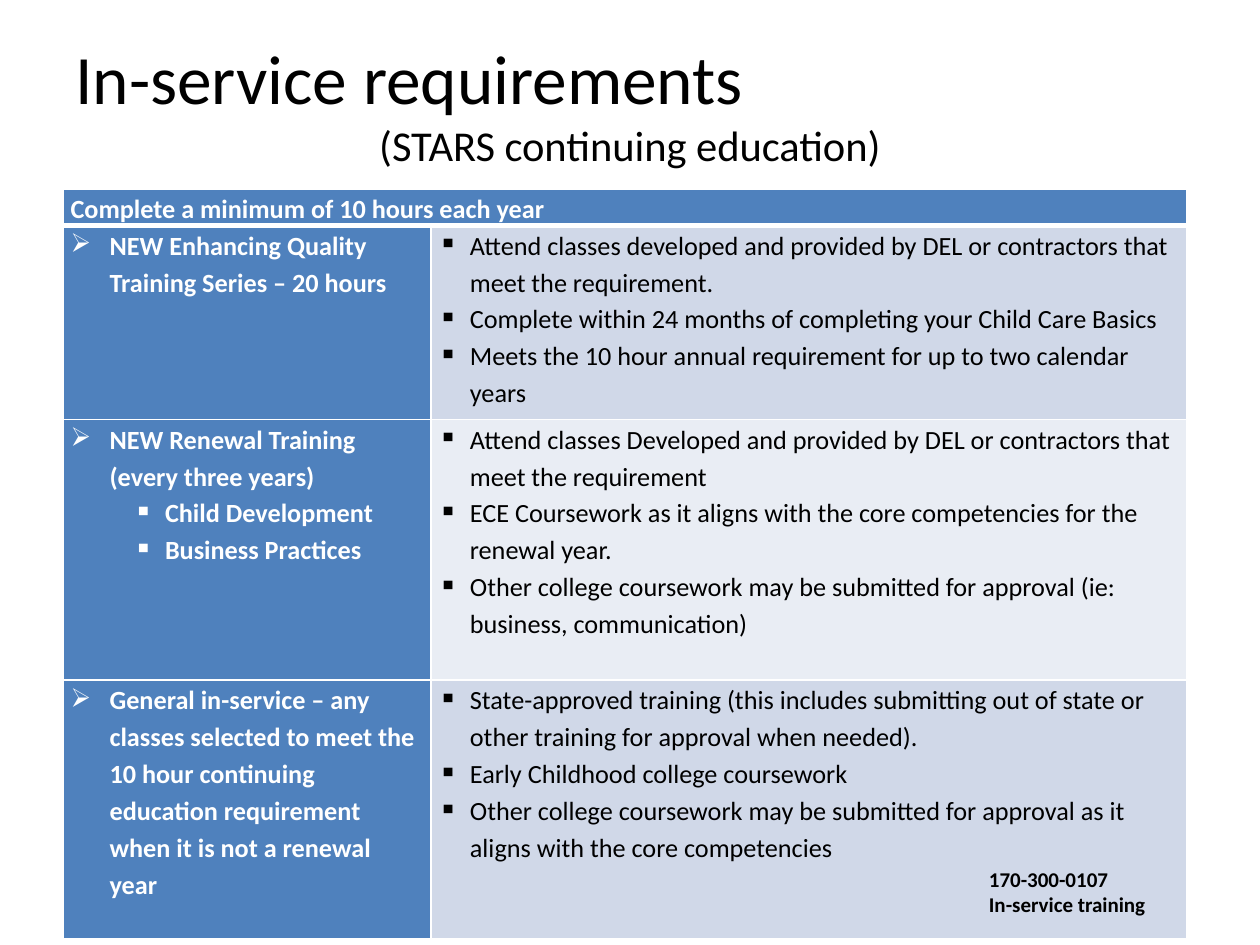
from lxml import etree
from pptx import Presentation
from pptx.dml.color import RGBColor
from pptx.enum.text import MSO_ANCHOR, PP_ALIGN
from pptx.oxml.ns import qn
from pptx.util import Inches, Pt

LEFT, CENTER = PP_ALIGN.LEFT, PP_ALIGN.CENTER
MIDDLE, TOP = MSO_ANCHOR.MIDDLE, MSO_ANCHOR.TOP
BLACK, WHITE, BLUE = "000000", "FFFFFF", "4F81BD"
BANDS = ["D0D8E8", "E9EDF4"]
COLUMNS = [2.92, 6]
ROWS = [0.28, 1.54, 2.07, 2.05]
ARROW, SQUARE, SUBSQUARE = ("➢", 0.31, 0.31), ("▪", 0.25, 0.25), ("▪", 0.75, 0.25)

HEADING = "Complete a minimum of 10 hours each year"
TRAININGS = [
    ("NEW Enhancing Quality Training Series – 20 hours", [], [
        "Attend classes developed and provided by DEL or contractors that meet the requirement.",
        "Complete within 24 months of completing your Child Care Basics",
        "Meets the 10 hour annual requirement for up to two calendar years"]),
    ("NEW Renewal Training (every three years)",
     ["Child Development", "Business Practices"], [
        "Attend classes Developed and provided by DEL or contractors that meet the requirement",
        "ECE Coursework as it aligns with the core competencies for the renewal year.",
        "Other college coursework may be submitted for approval (ie: business, communication)"]),
    ("General in-service – any classes selected to meet the 10 hour continuing "
     "education requirement when it is not a renewal year", [], [
        "State-approved training (this includes submitting out of state or other training "
        "for approval when needed).",
        "Early Childhood college coursework",
        "Other college coursework may be submitted for approval as it aligns with the "
        "core competencies"]),
]


def rgb(value):
    """Turn a hex string into a colour."""
    return RGBColor.from_string(value)


def set_all(target, values):
    """Set each attribute in a dict on the target."""
    for name, value in values.items():
        setattr(target, name, value)


def write(paragraph, text, size, color=BLACK, bold=False, align=LEFT):
    """Write one styled run into a paragraph."""
    paragraph.alignment = align
    run = paragraph.add_run()
    run.text = text
    set_all(run.font, {"name": "Calibri", "size": Pt(size), "bold": bold})
    run.font.color.rgb = rgb(color)


def add_bullet(paragraph, bullet):
    """Give a paragraph a bullet and its hanging indent."""
    mark, margin, hang = bullet
    properties = paragraph._p.get_or_add_pPr()
    properties.set("marL", str(Inches(margin)))
    properties.set("indent", str(-Inches(hang)))
    etree.SubElement(properties, qn("a:buChar")).set("char", mark)


def add_borders(cell, top, bottom):
    """Draw white cell borders of the given top and bottom widths."""
    properties = cell._tc.get_or_add_tcPr()
    for side, width in {"L": 1, "R": 1, "T": top, "B": bottom}.items():
        line = etree.SubElement(properties, qn(f"a:ln{side}"), w=str(Pt(width)))
        solid = etree.SubElement(line, qn("a:solidFill"))
        etree.SubElement(solid, qn("a:srgbClr"), val=WHITE)


def fill_cell(cell, entries, fill, color, bold):
    """Write bulleted entries into a filled cell."""
    set_all(cell, {"margin_left": Inches(0.06), "margin_right": Inches(0.06),
                   "margin_top": 0, "margin_bottom": 0, "vertical_anchor": TOP})
    cell.fill.solid()
    cell.fill.fore_color.rgb = rgb(fill)
    frame = cell.text_frame
    for index, (text, bullet) in enumerate(entries):
        paragraph = frame.add_paragraph() if index else frame.paragraphs[0]
        paragraph.line_spacing = 1.15
        write(paragraph, text, 15, color, bold)
        if bullet:
            add_bullet(paragraph, bullet)


def add_lines(slide, box, lines, anchor):
    """Place a text box with one paragraph for each styled line."""
    frame = slide.shapes.add_textbox(*map(Inches, box)).text_frame
    set_all(frame, {"word_wrap": True, "vertical_anchor": anchor})
    for index, line in enumerate(lines):
        write(frame.add_paragraph() if index else frame.paragraphs[0], **line)


def add_requirements(slide, box):
    """Place the table of training requirements."""
    table = slide.shapes.add_table(len(ROWS), len(COLUMNS), *map(Inches, box)).table
    for column, width in zip(table.columns, COLUMNS):
        column.width = Inches(width)
    for index, (row, height) in enumerate(zip(table.rows, ROWS)):
        row.height = Inches(height)
        for cell in row.cells:
            add_borders(cell, 3 if index == 1 else 1, 3 if index == 0 else 1)
    table.cell(0, 0).merge(table.cell(0, 1))
    fill_cell(table.cell(0, 0), [(HEADING, None)], BLUE, WHITE, True)
    for index, (training, topics, rules) in enumerate(TRAININGS):
        names = [(training, ARROW)] + [(topic, SUBSQUARE) for topic in topics]
        details = [(rule, SQUARE) for rule in rules]
        fill_cell(table.cell(index + 1, 0), names, BLUE, WHITE, True)
        fill_cell(table.cell(index + 1, 1), details, BANDS[index % 2], BLACK, False)


def main():
    """Build and save the slide."""
    deck = Presentation()
    set_all(deck, {"slide_width": Inches(10), "slide_height": Inches(7.5)})
    slide = deck.slides.add_slide(deck.slide_layouts[6])
    add_lines(slide, (0.5, 0.19, 9, 1.25), [
        {"text": "In-service requirements", "size": 39.6},
        {"text": "(STARS continuing education)", "size": 24.3, "align": CENTER},
    ], MIDDLE)
    add_requirements(slide, (0.5, 1.5, sum(COLUMNS), sum(ROWS)))
    add_lines(slide, (7.75, 6.83, 1.69, 0.5), [
        {"text": text, "size": 12, "bold": True}
        for text in ("170-300-0107", "In-service training")
    ], TOP)
    deck.save("out.pptx")


if __name__ == "__main__":
    main()
